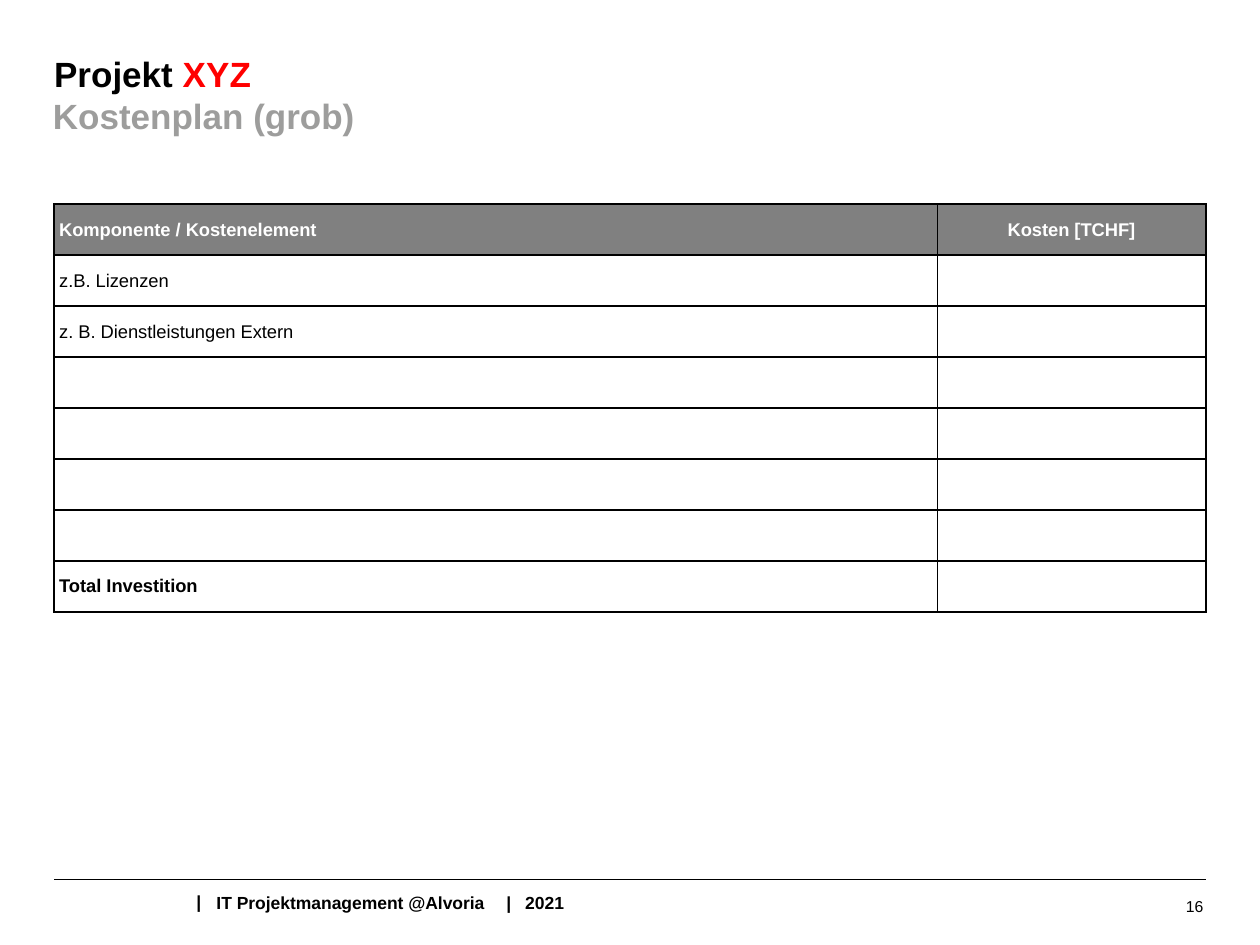
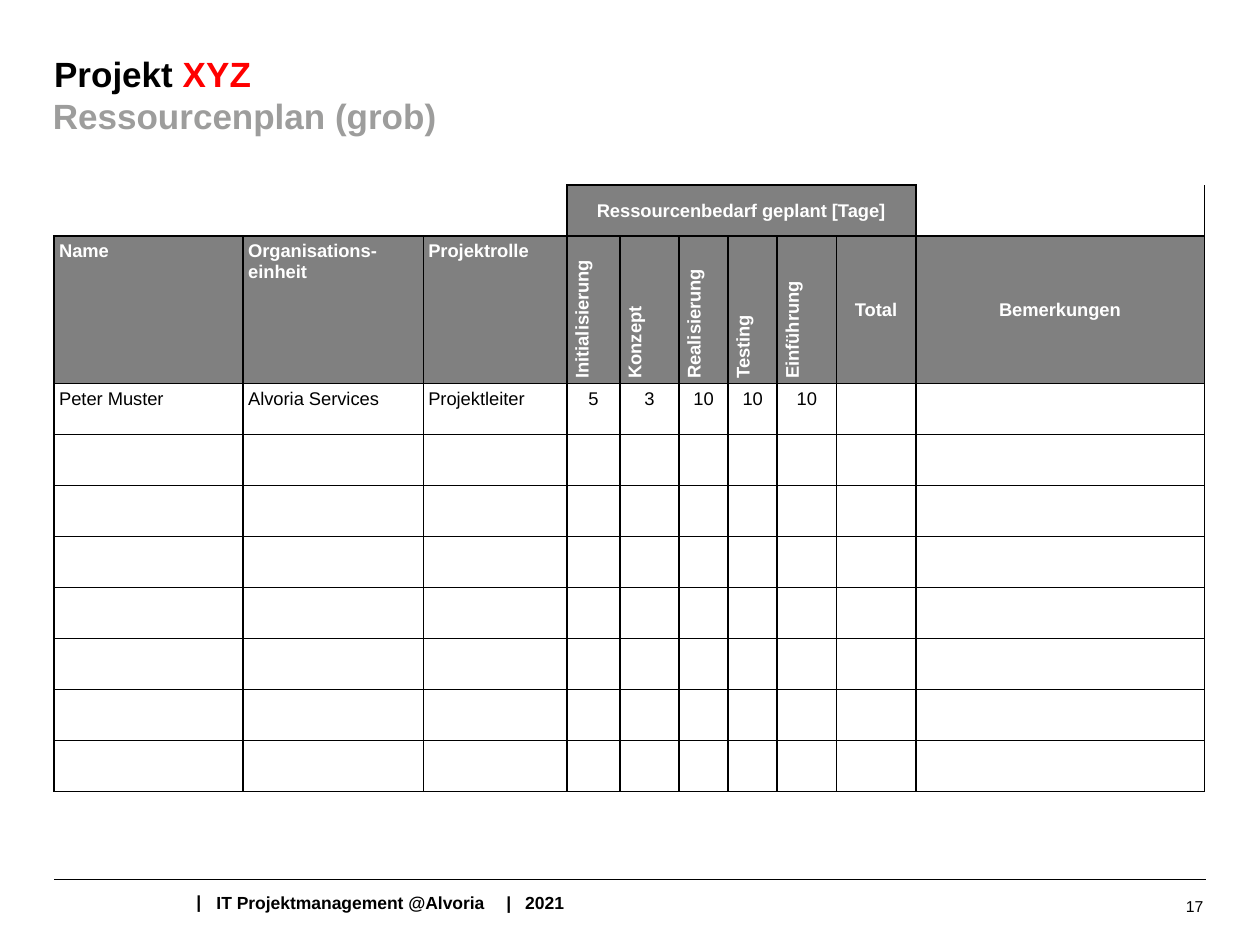
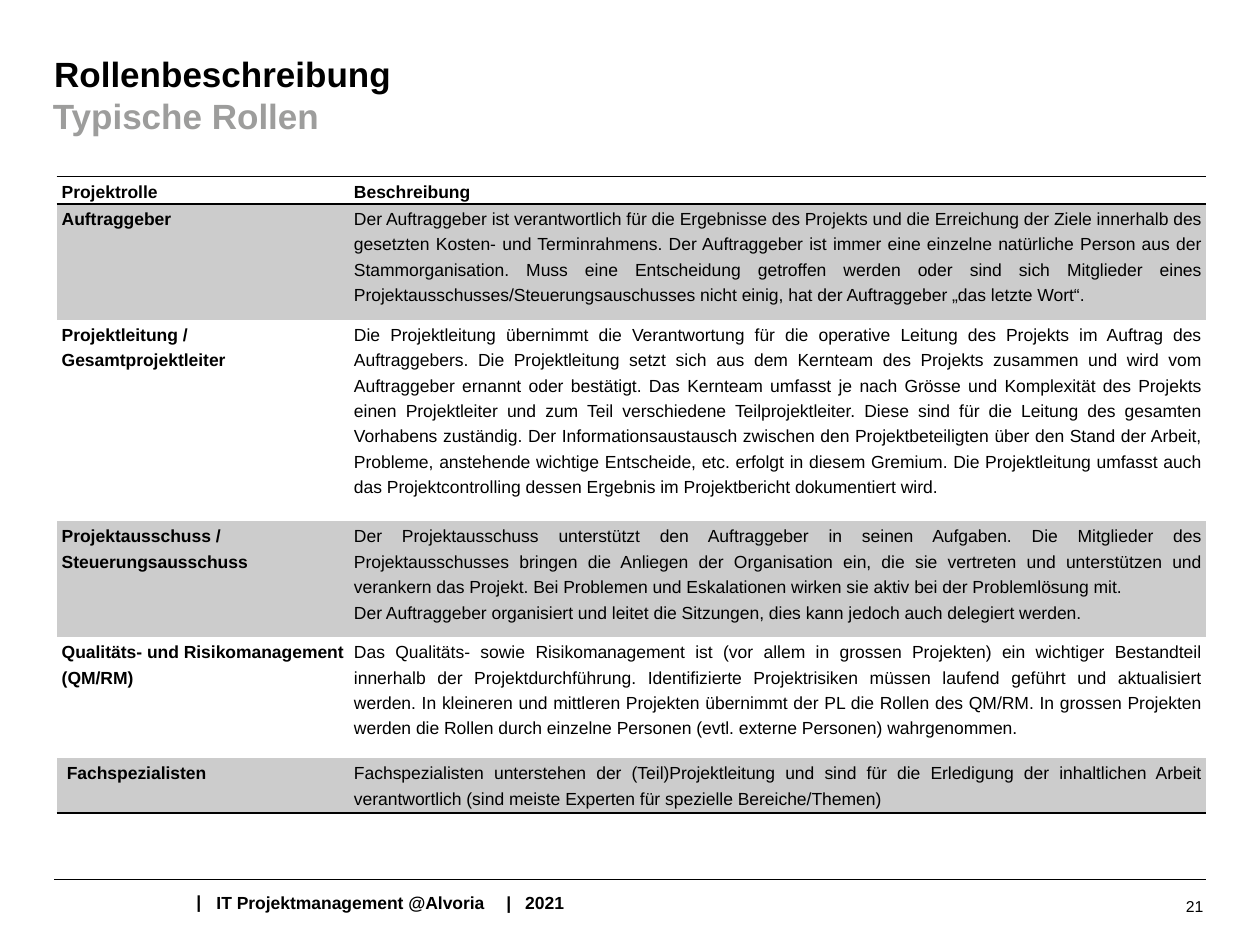
from lxml.etree import SubElement
from pptx import Presentation
from pptx.dml.color import RGBColor
from pptx.enum.shapes import MSO_CONNECTOR
from pptx.enum.text import MSO_ANCHOR, PP_ALIGN
from pptx.oxml.ns import qn
from pptx.util import Inches, Pt

BLACK = RGBColor(0x00, 0x00, 0x00)
WHITE = RGBColor(0xFF, 0xFF, 0xFF)
RED = RGBColor(0xFF, 0x00, 0x00)
SUBTITLE_GRAY = RGBColor(0x9D, 0x9D, 0x9C)
HEADER_GRAY = RGBColor(0x80, 0x80, 0x80)
BAND_GRAY = RGBColor(0xCC, 0xCC, 0xCC)

LEFT, WIDTH = 0.43, 9.14
ROW_HEIGHT = 3.24 / 8
NO_TABLE_STYLE = "{2D5ABB26-0587-4C30-8999-92F81FD0307C}"

HEADING = {"size": Pt(20), "bold": True}
FOOTER = {"size": Pt(10), "bold": True}
PAGE_NUMBER = {"size": Pt(9), "bold": False}
PLAN_TEXT = {"size": Pt(10.5), "bold": False}
PLAN_BOLD = {"size": Pt(10.5), "bold": True}
ROLE_TEXT = {"size": Pt(10), "bold": False}
ROLE_BOLD = {"size": Pt(10), "bold": True}

PLAN_CELL = dict.fromkeys(
    ("margin_left", "margin_right", "margin_top", "margin_bottom"), Inches(0.04))
MIDDLE_CELL = PLAN_CELL | {"vertical_anchor": MSO_ANCHOR.MIDDLE}
ROLE_CELL = PLAN_CELL | {"margin_top": 0, "margin_bottom": 0}
CENTERED = {"alignment": PP_ALIGN.CENTER}
ROLE_NAME = {"alignment": PP_ALIGN.LEFT, "line_spacing": 1.3}
ROLE_DUTIES = {"alignment": PP_ALIGN.JUSTIFY, "line_spacing": 1.3}


def add_run(paragraph, text, font_format, color=BLACK):
    run = paragraph.add_run()
    run.text = text
    run.font.name = "Arial"
    run.font.color.rgb = color
    for key, value in font_format.items():
        setattr(run.font, key, value)


def fill_cell(cell, text, font_format, cell_format, paragraph_format={},
              color=BLACK, fill=None, edges="LRTB"):
    """Write one paragraph per line of text and draw the named edges."""
    for key, value in cell_format.items():
        setattr(cell, key, value)
    for edge in edges:
        line = SubElement(cell._tc.get_or_add_tcPr(), qn(f"a:ln{edge}"), w=str(Pt(1)))
        SubElement(SubElement(line, qn("a:solidFill")), qn("a:srgbClr"), val=str(BLACK))
    if fill is None:
        cell.fill.background()
    else:
        cell.fill.solid()
        cell.fill.fore_color.rgb = fill
    for index, part in enumerate(text.split("\n") if text else []):
        frame = cell.text_frame
        paragraph = frame.add_paragraph() if index else frame.paragraphs[0]
        for key, value in paragraph_format.items():
            setattr(paragraph, key, value)
        add_run(paragraph, part, font_format, color)


prs = Presentation()
prs.slide_width, prs.slide_height = Inches(10), Inches(7.5)

# Slides with headings, footers and empty tables
PROJECT = [("Projekt ", BLACK), ("XYZ", RED)]
pages = [
    ("16", PROJECT, "Kostenplan (grob)",
     LEFT, 1.62, [7.01, 2.13], [ROW_HEIGHT] * 8),
    ("17", PROJECT, "Ressourcenplan (grob)",
     LEFT, 1.47, [1.5, 1.43, 1.14, 0.42, 0.47, 0.39, 0.39, 0.47, 0.63, 2.29],
     [ROW_HEIGHT, 1.17] + [ROW_HEIGHT] * 8),
    ("21", [("Rollenbeschreibung", BLACK)], "Typische Rollen",
     0.45, 1.4, [2.32, 6.8], [0.2, 0.92, 1.6, 0.92, 0.96, 0.4]),
]
tables = []
for number, title, subtitle, left, top, widths, heights in pages:
    slide = prs.slides.add_slide(prs.slide_layouts[6])
    rule = slide.shapes.add_connector(
        MSO_CONNECTOR.STRAIGHT, Inches(LEFT), Inches(6.98),
        Inches(LEFT + WIDTH), Inches(6.98))
    rule.line.color.rgb = BLACK
    rule.line.width = Pt(0.75)
    SubElement(rule._element.spPr, qn("a:effectLst"))

    texts = [
        (1.46, 7.02, 0.24, 0.27, 0.1, [("|", BLACK)], FOOTER),
        (1.62, 7.03, 3.23, 0.27, 0.1,
         [("IT Projektmanagement @Alvoria\t|\t2021", BLACK)], FOOTER),
        (7.32, 6.95, 2.33, 0.48, 0.1, [(number, BLACK)], PAGE_NUMBER),
        (LEFT, 0.37, WIDTH, 0.39, 0, title, HEADING),
        (0.42, 0.7, WIDTH, 0.39, 0, [(subtitle, SUBTITLE_GRAY)], HEADING),
    ]
    for x, y, width, height, inset, runs, font_format in texts:
        frame = slide.shapes.add_textbox(
            Inches(x), Inches(y), Inches(width), Inches(height)).text_frame
        frame.margin_left = Inches(inset)
        frame.word_wrap = font_format is not FOOTER
        paragraph = frame.paragraphs[0]
        if font_format is PAGE_NUMBER:
            frame.vertical_anchor = MSO_ANCHOR.MIDDLE
            paragraph.alignment = PP_ALIGN.RIGHT
        if "\t" in runs[0][0]:
            stops = SubElement(paragraph._p.get_or_add_pPr(), qn("a:tabLst"))
            for position in (2.3, 2.45):
                SubElement(stops, qn("a:tab"), pos=str(Inches(position)), algn="l")
        for text, color in runs:
            add_run(paragraph, text, font_format, color)

    table = slide.shapes.add_table(
        len(heights), len(widths), Inches(left), Inches(top),
        Inches(sum(widths)), Inches(sum(heights))).table
    table.first_row = table.horz_banding = False
    table._tbl.tblPr.find(qn("a:tableStyleId")).text = NO_TABLE_STYLE
    for column, width in zip(table.columns, widths):
        column.width = Inches(width)
    for row, height in zip(table.rows, heights):
        row.height = Inches(height)
    tables.append(table)
cost_table, resource_table, role_table = tables

# Cost plan
header = {"color": WHITE, "fill": HEADER_GRAY}
fill_cell(cost_table.cell(0, 0), "Komponente / Kostenelement", PLAN_BOLD, MIDDLE_CELL, **header)
fill_cell(cost_table.cell(0, 1), "Kosten [TCHF]", PLAN_BOLD, MIDDLE_CELL, CENTERED, **header)
cost_items = ["z.B. Lizenzen", "z. B. Dienstleistungen Extern", "", "", "", "",
              "Total Investition"]
for row, item in enumerate(cost_items, 1):
    font_format = PLAN_BOLD if row == len(cost_items) else PLAN_TEXT
    fill_cell(cost_table.cell(row, 0), item, font_format, MIDDLE_CELL)
    fill_cell(cost_table.cell(row, 1), "", PLAN_TEXT, MIDDLE_CELL)

# Resource plan
resource_table.cell(0, 0).merge(resource_table.cell(0, 2))
resource_table.cell(0, 3).merge(resource_table.cell(0, 8))
for column in range(10):
    if column < 3:
        fill_cell(resource_table.cell(0, column), "", PLAN_TEXT, PLAN_CELL, edges="RB")
    elif column < 9:
        text = "Ressourcenbedarf geplant [Tage]" if column == 3 else ""
        fill_cell(resource_table.cell(0, column), text, PLAN_BOLD, MIDDLE_CELL,
                  CENTERED, **header)
    else:
        fill_cell(resource_table.cell(0, column), "", PLAN_TEXT, PLAN_CELL, edges="LB")

resource_headers = ["Name", "Organisations-einheit", "Projektrolle", "Initialisierung",
                    "Konzept", "Realisierung", "Testing", "Einführung", "Total",
                    "Bemerkungen"]
for column, text in enumerate(resource_headers):
    cell = resource_table.cell(1, column)
    fill_cell(cell, text, PLAN_BOLD, PLAN_CELL if column < 3 else MIDDLE_CELL,
              CENTERED if column > 7 else {}, **header)
    if 3 <= column <= 7:
        cell._tc.tcPr.set("vert", "vert270")

member = ["Peter Muster", "Alvoria Services", "Projektleiter",
          "5", "3", "10", "10", "10", "", ""]
for row in range(2, 10):
    for column, text in enumerate(member if row == 2 else [""] * 10):
        fill_cell(resource_table.cell(row, column), text, PLAN_TEXT, PLAN_CELL,
                  CENTERED if column > 2 else {})

# Role descriptions
roles = [
    ("Projektrolle", "Beschreibung"),
    ("Auftraggeber",
     "Der Auftraggeber ist verantwortlich für die Ergebnisse des Projekts und die "
     "Erreichung der Ziele innerhalb des gesetzten Kosten- und Terminrahmens. Der "
     "Auftraggeber ist immer eine einzelne natürliche Person aus der Stammorganisation. "
     "Muss eine Entscheidung getroffen werden oder sind sich Mitglieder eines "
     "Projektausschusses/Steuerungsauschusses nicht einig, hat der Auftraggeber „das "
     "letzte Wort“."),
    ("Projektleitung / Gesamtprojektleiter",
     "Die Projektleitung übernimmt die Verantwortung für die operative Leitung des "
     "Projekts im Auftrag des Auftraggebers. Die Projektleitung setzt sich aus dem "
     "Kernteam des Projekts zusammen und wird vom Auftraggeber ernannt oder bestätigt. "
     "Das Kernteam umfasst je nach Grösse und Komplexität des Projekts einen "
     "Projektleiter und zum Teil verschiedene Teilprojektleiter. Diese sind für die "
     "Leitung des gesamten Vorhabens zuständig. Der Informationsaustausch zwischen den "
     "Projektbeteiligten über den Stand der Arbeit, Probleme, anstehende wichtige "
     "Entscheide, etc. erfolgt in diesem Gremium. Die Projektleitung umfasst auch das "
     "Projektcontrolling dessen Ergebnis im Projektbericht dokumentiert wird."),
    ("Projektausschuss / Steuerungsausschuss",
     "Der Projektausschuss unterstützt den Auftraggeber in seinen Aufgaben. Die "
     "Mitglieder des Projektausschusses bringen die Anliegen der Organisation ein, die "
     "sie vertreten und unterstützen und verankern das Projekt. Bei Problemen und "
     "Eskalationen wirken sie aktiv bei der Problemlösung mit.\n"
     "Der Auftraggeber organisiert und leitet die Sitzungen, dies kann jedoch auch "
     "delegiert werden."),
    ("Qualitäts- und Risikomanagement (QM/RM)",
     "Das Qualitäts- sowie Risikomanagement ist (vor allem in grossen Projekten) ein "
     "wichtiger Bestandteil innerhalb der Projektdurchführung. Identifizierte "
     "Projektrisiken müssen laufend geführt und aktualisiert werden. In kleineren und "
     "mittleren Projekten übernimmt der PL die Rollen des QM/RM. In grossen Projekten "
     "werden die Rollen durch einzelne Personen (evtl. externe Personen) wahrgenommen."),
    ("Fachspezialisten",
     "Fachspezialisten unterstehen der (Teil)Projektleitung und sind für die Erledigung "
     "der inhaltlichen Arbeit verantwortlich (sind meiste Experten für spezielle "
     "Bereiche/Themen)"),
]
role_edges = {0: "TB", len(roles) - 1: "B"}
for row, (role, duties) in enumerate(roles):
    look = {"fill": BAND_GRAY if row % 2 else None, "edges": role_edges.get(row, "")}
    fill_cell(role_table.cell(row, 0), role, ROLE_BOLD, ROLE_CELL, ROLE_NAME, **look)
    fill_cell(role_table.cell(row, 1), duties, ROLE_TEXT if row else ROLE_BOLD,
              ROLE_CELL, ROLE_DUTIES, **look)
role_table.cell(len(roles) - 1, 0).margin_left = Inches(0.08)

prs.save("out.pptx")
